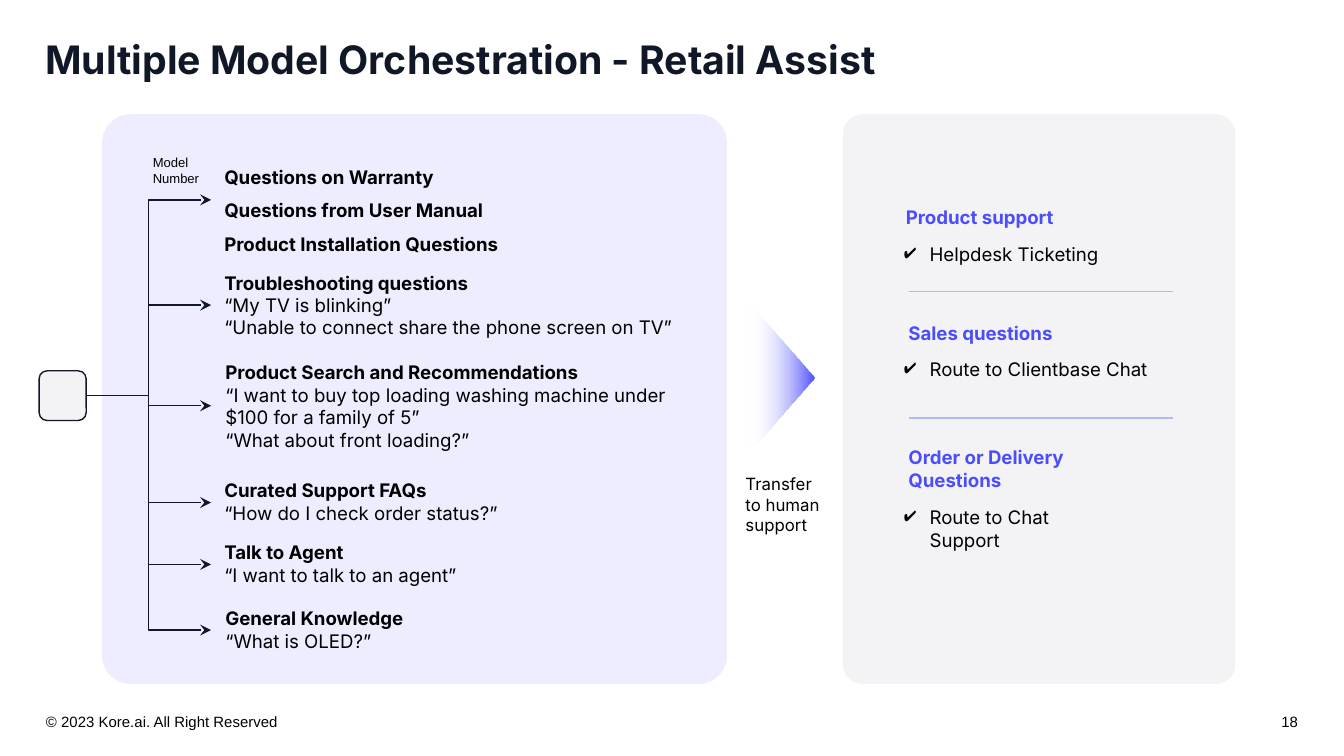
"""Build the retail assist orchestration slide."""
from dataclasses import dataclass
from typing import Optional

from lxml.etree import SubElement
from pptx import Presentation
from pptx.dml.color import RGBColor
from pptx.enum.shapes import MSO_CONNECTOR, MSO_SHAPE
from pptx.enum.text import MSO_ANCHOR, PP_ALIGN
from pptx.oxml.ns import qn
from pptx.util import Cm, Pt

BLACK, NAVY, INDIGO = "000000", "101727", "4B4DFC"
LAVENDER, GREY, RULE, WHITE = "EDEDFF", "F3F2F5", "B6B6FD", "FFFFFF"


@dataclass(frozen=True)
class Box:
    """A rectangle in centimetres."""

    left: float
    top: float
    width: float
    height: float

    def lengths(self) -> tuple:
        """Return the four sides as slide lengths."""
        return Cm(self.left), Cm(self.top), Cm(self.width), Cm(self.height)


@dataclass(frozen=True)
class Style:
    """The look of one run of text."""

    size: float = 10
    color: str = BLACK
    bold: bool = False
    font: str = "Inter"


BODY, STRONG = Style(), Style(bold=True)
HEADING = Style(color=INDIGO, bold=True)
SMALL, FOOTER = Style(7, font="Arial"), Style(8, font="Arial")


@dataclass(frozen=True)
class Label:
    """A text box with one styled run in each paragraph."""

    box: Box
    lines: tuple
    inset: tuple = (0.25, 0.25)
    spacing: Optional[float] = None
    align: PP_ALIGN = PP_ALIGN.LEFT
    anchor: MSO_ANCHOR = MSO_ANCHOR.TOP
    checked: bool = False


@dataclass(frozen=True)
class Intent:
    """A group of questions with its bold headings and sample phrases."""

    box: Box
    headings: tuple
    phrases: tuple = ()
    spacing: Optional[float] = None


@dataclass(frozen=True)
class Handover:
    """A support topic and the channel that receives it."""

    topic: str
    topic_box: Box
    channel: str
    channel_box: Box


INTENTS = (
    Intent(Box(3.99, 2.67, 7.21, 2.24),
           ("Questions on Warranty", "Questions from User Manual", "Product Installation Questions"),
           spacing=1.5),
    Intent(Box(3.99, 4.88, 8.97, 1.8), ("Troubleshooting questions",),
           ("“My TV is blinking”", "“Unable to connect share the phone screen on TV”")),
    Intent(Box(4.01, 6.58, 9.14, 2.24), ("Product Search and Recommendations",),
           ("“I want to buy top loading washing machine under $100 for a family of 5”",
            "“What about front loading?”")),
    Intent(Box(3.99, 8.81, 7.21, 1.37), ("Curated Support FAQs",), ("“How do I check order status?”",)),
    Intent(Box(3.99, 9.98, 5.26, 1.37), ("Talk to Agent",), ("“I want to talk to an agent”",)),
    Intent(Box(4.01, 11.23, 5.26, 1.37), ("General Knowledge",), ("“What is OLED?”",)),
)
HANDOVERS = (
    Handover("Product support", Box(16.87, 3.68, 3.73, 0.94),
             "Helpdesk Ticketing", Box(16.84, 4.37, 4.83, 0.94)),
    Handover("Sales questions", Box(16.92, 5.87, 3.61, 0.94),
             "Route to Clientbase Chat", Box(16.84, 6.55, 5.69, 0.94)),
    Handover("Order or Delivery Questions", Box(16.92, 8.18, 3.73, 1.37),
             "Route to Chat Support", Box(16.84, 9.32, 4.27, 1.37)),
)
LABELS = (
    Label(Box(0.71, 0.69, 21.84, 1.22),
          (("Multiple Model Orchestration - Retail Assist", Style(21, NAVY, True)),), (0.15, 0.08), 0.9),
    Label(Box(2.64, 2.67, 1.5, 1.12), (("Model Number", SMALL),)),
    Label(Box(13.84, 8.71, 2.08, 1.68), (("Transfer to human support", Style(9)),)),
    Label(Box(0.69, 13.34, 7.85, 0.56), (("© 2023 Kore.ai. All Right Reserved", FOOTER),),
          (0.18, 0.1), anchor=MSO_ANCHOR.BOTTOM),
    Label(Box(22.81, 13.34, 1.9, 0.56), (("18", FOOTER),),
          (0.18, 0.1), align=PP_ALIGN.RIGHT, anchor=MSO_ANCHOR.BOTTOM),
)
PANELS = ((Box(1.93, 2.16, 11.81, 10.77), LAVENDER), (Box(15.93, 2.16, 7.42, 10.77), GREY))
NODE = Box(0.74, 7.01, 0.89, 0.94)
BRANCH_RIGHT = 3.99
BRANCH_TOPS = (3.78, 5.77, 7.67, 9.5, 10.67, 11.91)
RULE_TOPS = (5.51, 7.9)


def rgb(color: str) -> RGBColor:
    """Turn a hex string into a colour."""
    return RGBColor.from_string(color)


def add_check(paragraph) -> None:
    """Give a paragraph a black check mark with a hanging indent."""
    properties = paragraph._p.get_or_add_pPr()
    properties.set("marL", str(Cm(0.48)))
    properties.set("indent", str(-Cm(0.48)))
    bullet_color = SubElement(properties, qn("a:buClr"))
    SubElement(bullet_color, qn("a:srgbClr"), val=BLACK)
    SubElement(properties, qn("a:buChar"), char="✔")


def add_label(slide, label: Label) -> None:
    """Draw a text box."""
    frame = slide.shapes.add_textbox(*label.box.lengths()).text_frame
    frame.word_wrap = True
    frame.vertical_anchor = label.anchor
    frame.margin_left = frame.margin_right = Cm(label.inset[0])
    frame.margin_top = frame.margin_bottom = Cm(label.inset[1])
    for index, (text, style) in enumerate(label.lines):
        paragraph = frame.add_paragraph() if index else frame.paragraphs[0]
        if label.checked:
            add_check(paragraph)
        paragraph.alignment = label.align
        if label.spacing:
            paragraph.line_spacing = label.spacing
        run = paragraph.add_run()
        run.text = text
        run.font.name, run.font.size, run.font.bold = style.font, Pt(style.size), style.bold
        run.font.color.rgb = rgb(style.color)


def add_rounded(slide, box: Box, fill: str, radius: float, line: Optional[str] = None) -> None:
    """Draw a rounded rectangle."""
    shape = slide.shapes.add_shape(MSO_SHAPE.ROUNDED_RECTANGLE, *box.lengths())
    shape.shadow.inherit = False
    shape.adjustments[0] = radius
    shape.fill.solid()
    shape.fill.fore_color.rgb = rgb(fill)
    if line:
        shape.line.color.rgb = rgb(line)
        shape.line.width = Pt(0.75)
    else:
        shape.line.fill.background()


def add_line(slide, kind: MSO_CONNECTOR, start: tuple, end: tuple, color: str, arrow: bool = False) -> None:
    """Draw a connector between two points in centimetres."""
    connector = slide.shapes.add_connector(kind, *map(Cm, start + end))
    connector.line.color.rgb = rgb(color)
    connector.line.width = Pt(0.75)
    if arrow:
        SubElement(connector.line._get_or_add_ln(), qn("a:tailEnd"), type="stealth")
    SubElement(connector._element.spPr, qn("a:effectLst"))


def add_transfer_arrow(slide, box: Box) -> None:
    """Draw the arrowhead that fades out to the left."""
    shape = slide.shapes.add_shape(MSO_SHAPE.RIGHT_ARROW, *box.lengths())
    shape.shadow.inherit = False
    shape.adjustments[0], shape.adjustments[1] = 0.5, 1.68
    shape.line.fill.background()
    shape.fill.gradient()
    shape.fill.gradient_angle = 180
    for stop, color, position in zip(shape.fill.gradient_stops, (INDIGO, WHITE), (0, 1)):
        stop.color.rgb = rgb(color)
        stop.position = position
    faded = shape._element.spPr.findall(".//" + qn("a:srgbClr"))[-1]
    SubElement(faded, qn("a:alpha"), val="0")


def main() -> None:
    """Build and save the presentation."""
    presentation = Presentation()
    presentation.slide_width, presentation.slide_height = Cm(25.4), Cm(14.29)
    slide = presentation.slides.add_slide(presentation.slide_layouts[6])
    for box, fill in PANELS:
        add_rounded(slide, box, fill, 0.05)
    add_rounded(slide, NODE, GREY, 0.17, NAVY)
    start = (NODE.left + NODE.width, NODE.top + NODE.height / 2)
    for top in BRANCH_TOPS:
        add_line(slide, MSO_CONNECTOR.ELBOW, start, (BRANCH_RIGHT, top), NAVY, arrow=True)
    for top in RULE_TOPS:
        add_line(slide, MSO_CONNECTOR.STRAIGHT, (17.17, top), (22.17, top), RULE)
    add_transfer_arrow(slide, Box(14.17, 5.72, 1.22, 2.84))
    for label in LABELS:
        add_label(slide, label)
    for intent in INTENTS:
        lines = [(text, STRONG) for text in intent.headings] + [(text, BODY) for text in intent.phrases]
        add_label(slide, Label(intent.box, tuple(lines), spacing=intent.spacing))
    for handover in HANDOVERS:
        add_label(slide, Label(handover.topic_box, ((handover.topic, HEADING),)))
        add_label(slide, Label(handover.channel_box, ((handover.channel, BODY),), checked=True))
    presentation.save("out.pptx")


if __name__ == "__main__":
    main()
